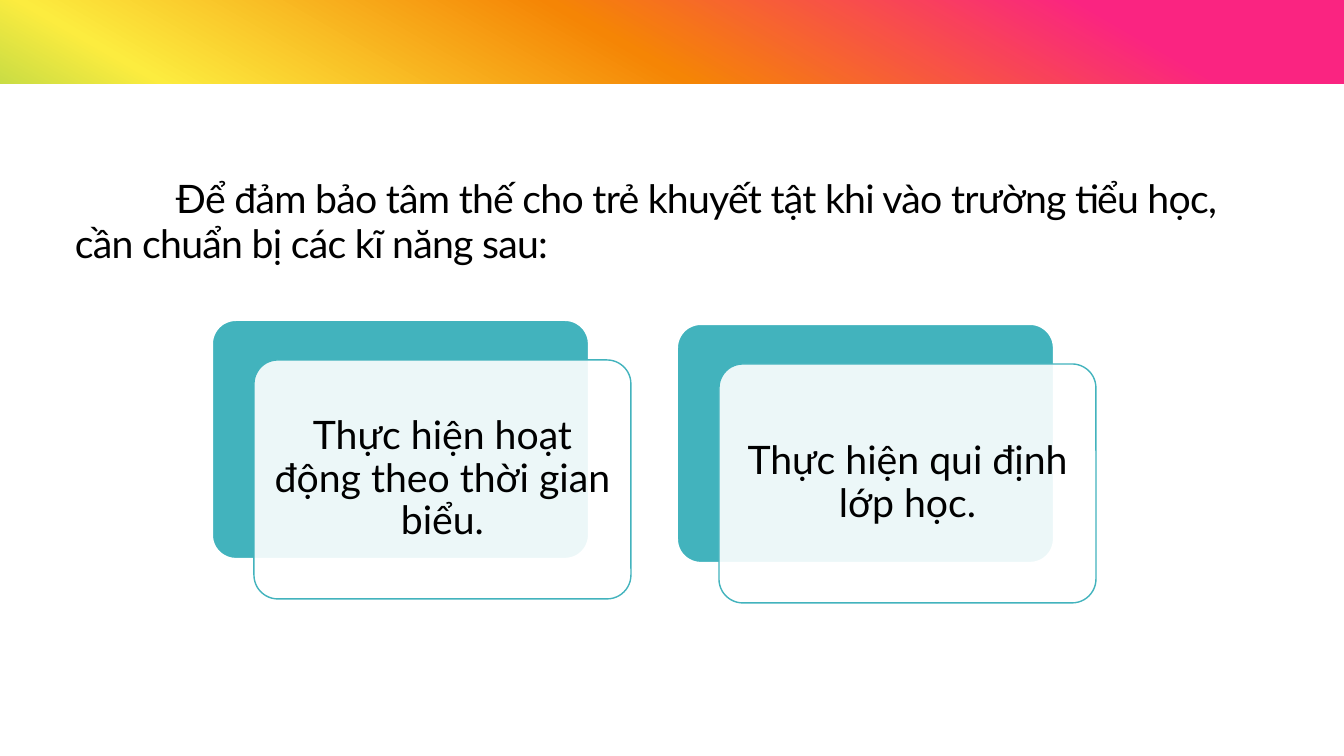
import dataclasses

import lxml.etree
import pptx
import pptx.dml.color
import pptx.enum.shapes
import pptx.enum.text
import pptx.oxml.ns
import pptx.util


@dataclasses.dataclass(frozen=True)
class Theme:
    font: str = "Lato"
    text_size: int = 28
    text: str = "000000"
    paper: str = "FFFFFF"
    teal: str = "42B3BD"
    rainbow: tuple = ((10, "FA2481"), (30, "F58505"), (50, "FCEC3F"), (70, "51B851"), (90, "42B3BD"))


SHAPES = pptx.enum.shapes.MSO_SHAPE
ALIGN = pptx.enum.text.PP_ALIGN
ANCHOR = pptx.enum.text.MSO_ANCHOR
WIDTH, HEIGHT = 1344, 756


def px(length):
    return pptx.util.Emu(round(length * 914400 / 100.8))


def rgb(color):
    return pptx.dml.color.RGBColor.from_string(color)


class SlideBuilder:
    """Draws styled elements on one slide, measured in px."""

    def __init__(self, slide, theme):
        self.slide = slide
        self.theme = theme

    def panel(self, kind, left, top, width, height, fill, line=None, line_width=1):
        panel = self.slide.shapes.add_shape(kind, px(left), px(top), px(width), px(height))
        panel.shadow.inherit = False
        panel.fill.solid()
        panel.fill.fore_color.rgb = rgb(fill)
        if line:
            panel.line.color.rgb = rgb(line)
            panel.line.width = pptx.util.Pt(line_width)
        else:
            panel.line.fill.background()
        return panel

    def rainbow(self, left, top, width, height):
        band = self.panel(SHAPES.RECTANGLE, left, top, width, height, self.theme.paper)
        band.fill.gradient()
        band.fill.gradient_angle = 240
        stops = next(band._element.iter(pptx.oxml.ns.qn("a:gsLst")))
        for stop in list(stops):
            stops.remove(stop)
        for percent, color in self.theme.rainbow:
            stop = lxml.etree.SubElement(stops, pptx.oxml.ns.qn("a:gs"), pos=str(percent * 1000))
            lxml.etree.SubElement(stop, pptx.oxml.ns.qn("a:srgbClr"), val=color)

    def add_words(self, frame, words, align, anchor, line_spacing, inset):
        frame.word_wrap = True
        frame.vertical_anchor = anchor
        frame.margin_left = frame.margin_right = px(inset)
        frame.margin_top = frame.margin_bottom = px(inset)
        paragraph = frame.paragraphs[0]
        paragraph.alignment = align
        paragraph.line_spacing = line_spacing
        run = paragraph.add_run()
        run.text = words
        run.font.name = self.theme.font
        run.font.size = pptx.util.Pt(self.theme.text_size)
        run.font.color.rgb = rgb(self.theme.text)
        return paragraph, run

    def heading(self, left, top, width, height, words, indent):
        box = self.slide.shapes.add_textbox(px(left), px(top), px(width), px(height))
        paragraph, run = self.add_words(box.text_frame, words, ALIGN.LEFT, ANCHOR.TOP, 0.95, 10)
        paragraph._p.get_or_add_pPr().set("indent", str(px(indent)))
        run._r.get_or_add_rPr().set("spc", "-50")

    def card(self, left, top, words):
        theme, width, height = self.theme, 377, 239
        back = self.panel(SHAPES.ROUNDED_RECTANGLE, left, top, width, height, theme.teal, theme.paper, 1.5)
        front = self.panel(SHAPES.ROUNDED_RECTANGLE, left + 42, top + 40, width, height, theme.paper, theme.teal)
        for layer in (back, front):
            layer.adjustments[0] = 0.1
        veil = next(front._element.iter(pptx.oxml.ns.qn("a:srgbClr")))
        lxml.etree.SubElement(veil, pptx.oxml.ns.qn("a:alpha"), val="90000")
        self.add_words(front.text_frame, words, ALIGN.CENTER, ANCHOR.MIDDLE, 0.9, 12)


def main():
    deck = pptx.Presentation()
    deck.slide_width, deck.slide_height = px(WIDTH), px(HEIGHT)
    theme = Theme()
    builder = SlideBuilder(deck.slides.add_slide(deck.slide_layouts[6]), theme)
    builder.rainbow(0, 0, WIDTH, HEIGHT)
    builder.panel(SHAPES.RECTANGLE, 0, 84, WIDTH, HEIGHT - 84, theme.paper)
    builder.heading(
        65, 168, 1223, 135,
        "Để đảm bảo tâm thế cho trẻ khuyết tật khi vào trường tiểu học, cần chuẩn bị các kĩ năng sau:",
        indent=101,
    )
    builder.card(212, 320, "Thực hiện hoạt động theo thời gian biểu.")
    builder.card(677, 324, "Thực hiện qui định lớp học.")
    deck.save("out.pptx")


if __name__ == "__main__":
    main()
